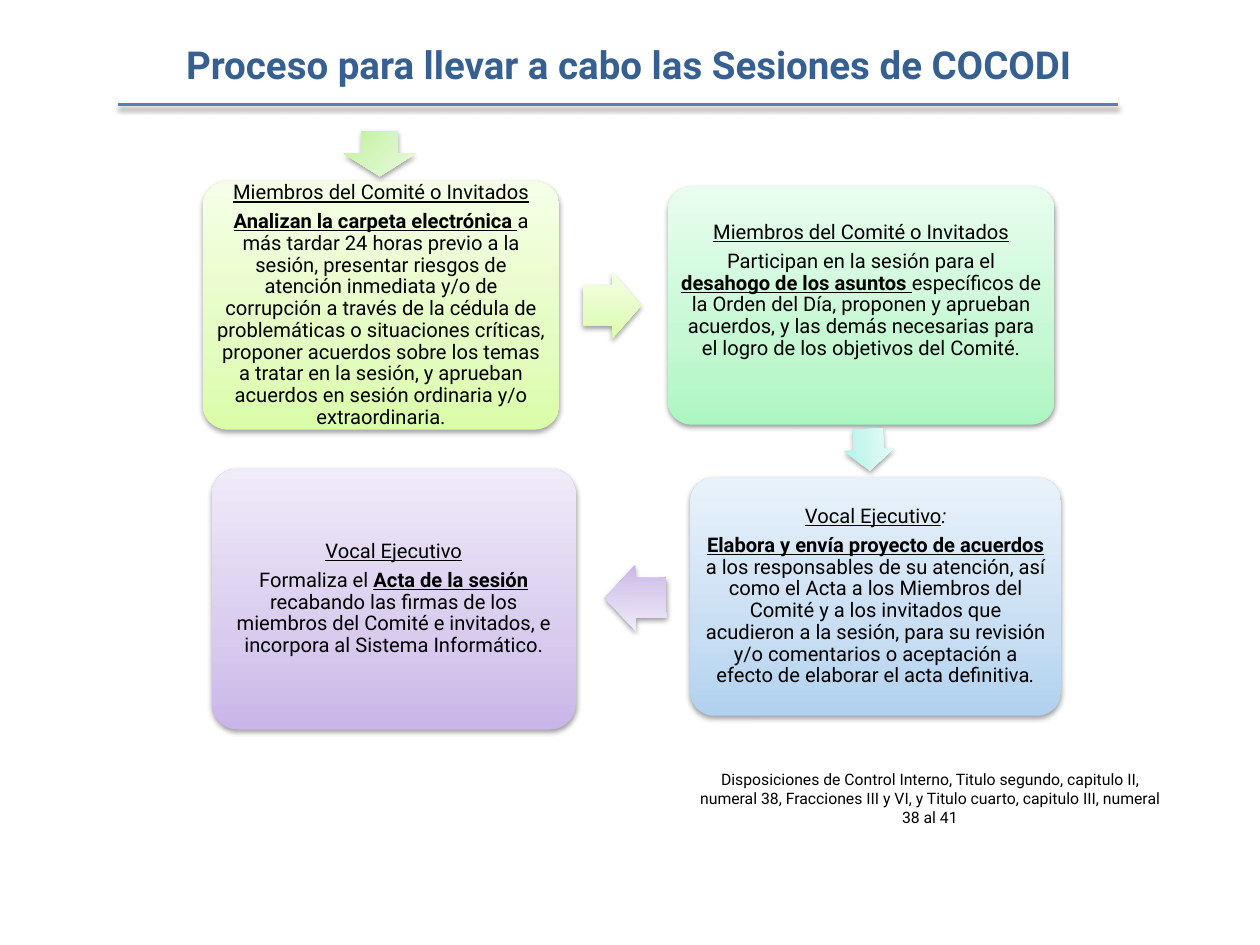
"""Build the slide on the steps of the COCODI sessions."""
from lxml import etree
from pptx import Presentation
from pptx.dml.color import RGBColor
from pptx.enum.shapes import MSO_CONNECTOR as Link, MSO_SHAPE as Shape
from pptx.enum.text import MSO_ANCHOR as Anchor, PP_ALIGN as Align
from pptx.util import Inches, Pt

NS = "http://schemas.openxmlformats.org/drawingml/2006/main"
BLACK = RGBColor(0x00, 0x00, 0x00)
NAVY = RGBColor(0x37, 0x60, 0x92)
BLUE = RGBColor(0x4F, 0x81, 0xBD)
LIME = [RGBColor.from_string(c) for c in ("DAFDA7", "E4FCC2", "F5FFE7")]
MINT = [RGBColor.from_string(c) for c in ("ACF6C1", "C5F8D3", "E8FDEE")]
AQUA = [RGBColor.from_string(c) for c in ("AEF3E9", "C6F5EE", "E8FCF9")]
SKY = [RGBColor.from_string(c) for c in ("B0D1EF", "C8DEF3", "E9F2FB")]
LILAC = [RGBColor.from_string(c) for c in ("C9B5E8", "D8CBEE", "F0EAF9")]
LEAF = [RGBColor.from_string(c) for c in ("BEF297", "D5F6C0", "EAFAE0")]
LINEAR = '<a:lin ang="16200000" scaled="1"/>'
RADIAL = '<a:path path="circle"><a:fillToRect r="100000" b="100000"/></a:path>'
SHADOW = (f'<a:effectLst xmlns:a="{NS}"><a:outerShdw blurRad="40000" dist="20000" '
          'dir="5400000" rotWithShape="0"><a:srgbClr val="000000">'
          '<a:alpha val="38000"/></a:srgbClr></a:outerShdw></a:effectLst>')


def add_form(kind, place, tones, mid=35, blend=LINEAR):
    form = slide.shapes.add_shape(kind, *[Inches(v) for v in place])
    stops = "".join(f'<a:gs pos="{pos * 1000}"><a:srgbClr val="{tone}"/></a:gs>'
                    for pos, tone in zip((0, mid, 100), tones))
    props = form._element.spPr
    props.append(etree.fromstring(
        f'<a:gradFill xmlns:a="{NS}" rotWithShape="1"><a:gsLst>{stops}</a:gsLst>{blend}</a:gradFill>'))
    form.line.fill.background()
    props.append(etree.fromstring(SHADOW))
    return form


def add_run(para, text, size, color, marks=""):
    run = para.add_run()
    run.text = text
    font = run.font
    font.name, font.size, font.color.rgb = "Roboto", Pt(size), color
    font.bold, font.italic, font.underline = [m in marks for m in "biu"]


deck = Presentation()
deck.slide_width, deck.slide_height = Inches(10), Inches(7.5)
slide = deck.slides.add_slide(deck.slide_layouts[6])

cards = [
    ((1.61, 1.44, 2.83, 1.97), LIME, 0.05, [
        [("Miembros del Comité o Invitados", "u")],
        [("Analizan la carpeta electrónica ", "bu"),
         ("a más tardar 24 horas previo a la sesión, presentar riesgos de atención "
          "inmediata y/o de corrupción a través de la cédula de problemáticas o "
          "situaciones críticas, proponer acuerdos sobre los temas a tratar en la "
          "sesión, y aprueban acuerdos en sesión ordinaria y/o extraordinaria.", "")]]),
    ((5.3, 1.48, 3.07, 1.89), MINT, 0.28, [
        [("Miembros del Comité o Invitados", "u")],
        [("Participan en la sesión para el ", ""),
         ("desahogo de los asuntos ", "bu"),
         ("específicos de la Orden del Día, proponen y aprueban acuerdos, y las demás "
          "necesarias para el logro de los objetivos del Comité.", "")]]),
    ((5.48, 3.79, 2.94, 1.89), SKY, 0.05, [
        [("Vocal Ejecutivo", "u"), (":", "i")],
        [("Elabora y envía proyecto de acuerdos ", "bu"),
         ("a los responsables de su atención, así como el Acta a los Miembros del "
          "Comité y a los invitados que acudieron a la sesión, para su revisión y/o "
          "comentarios o aceptación a efecto de elaborar el acta definitiva", ""),
         (".", "i")]]),
    ((1.68, 3.72, 2.89, 2.07), LILAC, 0.05, [
        [("Vocal Ejecutivo", "u")],
        [("Formaliza el ", ""),
         ("Acta de la sesión ", "bu"),
         ("recabando las firmas de los miembros del Comité e invitados, e incorpora "
          "al Sistema Informático.", "")]]),
]
for place, tones, base, paras in cards:
    card = add_form(Shape.ROUNDED_RECTANGLE, place, tones)
    card.adjustments[0] = 0.1
    frame = card.text_frame
    frame.word_wrap = True
    frame.vertical_anchor = Anchor.MIDDLE
    frame.margin_left = frame.margin_right = frame.margin_top = Inches(0.05)
    frame.margin_bottom = Inches(base)
    for i, runs in enumerate(paras):
        para = frame.add_paragraph() if i else frame.paragraphs[0]
        para.alignment = Align.CENTER
        para.line_spacing = 0.9
        para.space_after = Pt(4)
        for text, marks in runs:
            add_run(para, text, 11.5, BLACK, marks)

arrows = [
    ((4.63, 2.16, 0.46, 0.53), LIME, 0),
    ((6.73, 3.37, 0.33, 0.4), AQUA, 86.8),
    ((4.8, 4.48, 0.49, 0.53), LILAC, 179.6),
]
for place, tones, turn in arrows:
    arrow = add_form(Shape.RIGHT_ARROW, place, tones)
    arrow.adjustments[0] = 0.6
    arrow.rotation = turn

add_form(Shape.DOWN_ARROW, (2.73, 1.04, 0.57, 0.36), LEAF, 50, RADIAL)

rule = slide.shapes.add_connector(
    Link.STRAIGHT, Inches(0.94), Inches(0.83), Inches(8.87), Inches(0.83))
rule.line.color.rgb = BLUE
rule.line.width = Pt(2)
rule._element.spPr.append(etree.fromstring(SHADOW))

labels = [
    ((1.11, 0.28, 7.76, 0.47), 22, NAVY, "b",
     "Proceso para llevar a cabo las Sesiones de COCODI"),
    ((5.43, 6.06, 3.9, 0.4), 9, BLACK, "",
     "Disposiciones de Control Interno, Titulo segundo, capitulo II, numeral 38, "
     "Fracciones III y VI, y Titulo cuarto, capitulo III, numeral 38 al 41"),
]
for place, size, color, marks, text in labels:
    frame = slide.shapes.add_textbox(*[Inches(v) for v in place]).text_frame
    frame.word_wrap = True
    para = frame.paragraphs[0]
    para.alignment = Align.CENTER
    add_run(para, text, size, color, marks)

deck.save("out.pptx")
